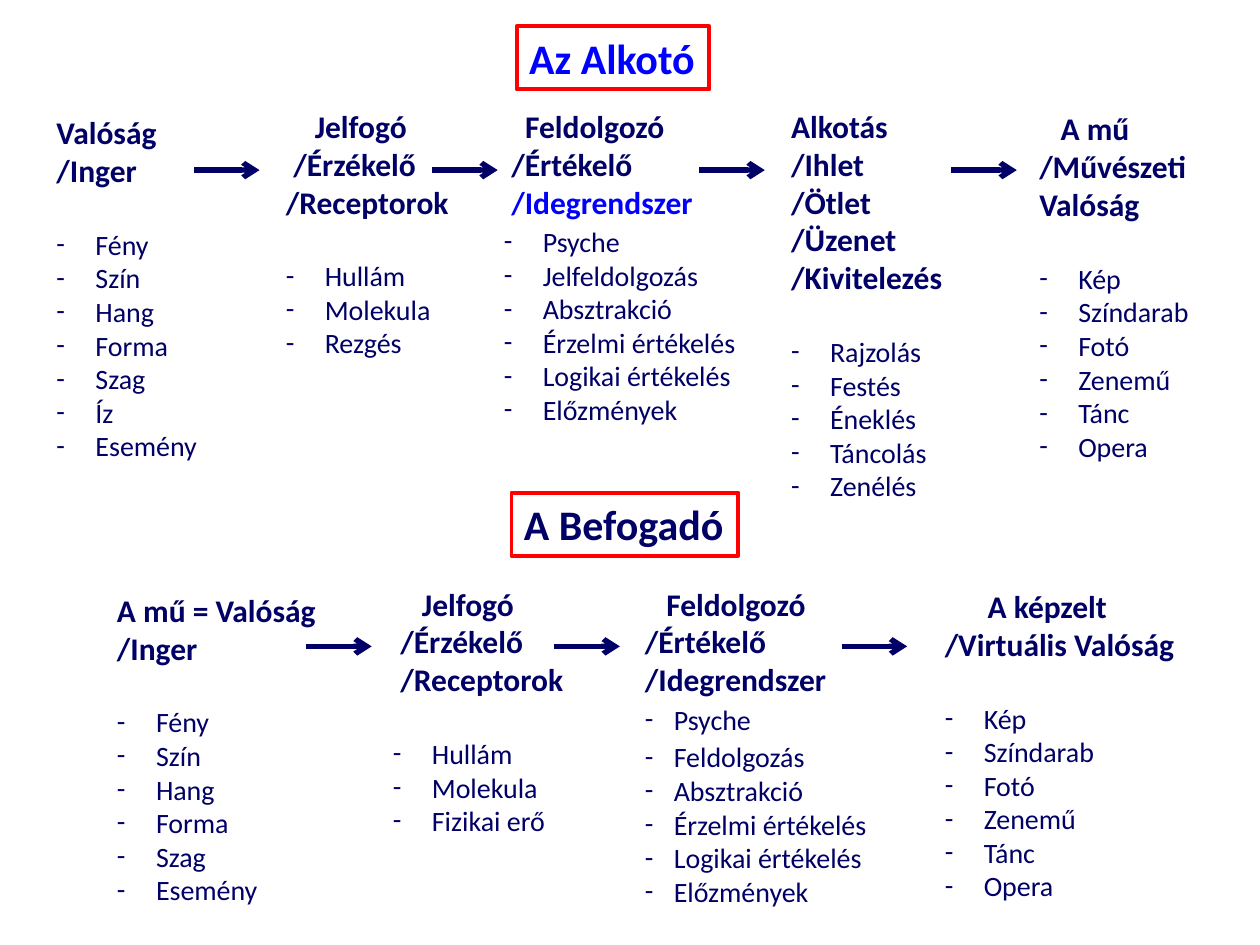
from dataclasses import dataclass
from itertools import zip_longest

from lxml.etree import SubElement
from pptx import Presentation
from pptx.dml.color import RGBColor
from pptx.enum.shapes import MSO_CONNECTOR
from pptx.enum.text import MSO_ANCHOR, MSO_AUTO_SIZE, PP_ALIGN
from pptx.oxml.ns import qn
from pptx.util import Inches, Pt


@dataclass(frozen=True)
class Theme:
    font: str = "Calibri"
    navy: RGBColor = RGBColor(0x00, 0x00, 0x66)
    blue: RGBColor = RGBColor(0x00, 0x00, 0xFF)
    red: RGBColor = RGBColor(0xFF, 0x00, 0x00)
    heading: Pt = Pt(24)
    stage: Pt = Pt(18)
    item: Pt = Pt(16)
    frame: Pt = Pt(2.25)
    arrow: Pt = Pt(3)


theme = Theme()


def style(paragraph, text, size, color, bold):
    paragraph.text = text
    paragraph.font.name = theme.font
    paragraph.font.size = size
    paragraph.font.color.rgb = color
    paragraph.font.bold = bold


def indent(paragraph, margin, hanging=False):
    properties = paragraph._p.get_or_add_pPr()
    properties.set("marL", str(Inches(margin)))
    properties.set("indent", str(-Inches(margin) if hanging else 0))
    if hanging:
        bullet_font = SubElement(properties, qn("a:buFont"))
        bullet_font.set("typeface", theme.font)
        SubElement(properties, qn("a:buChar")).set("char", "-")
        properties.append(properties.find(qn("a:defRPr")))


presentation = Presentation()
presentation.slide_width = Inches(10)
presentation.slide_height = Inches(7.5)
slide = presentation.slides.add_slide(presentation.slide_layouts[5])

creator = slide.shapes.title
receiver = slide.shapes.add_textbox(0, 0, Inches(1), Inches(0.5))
headings = [
    (creator, "Az Alkotó", theme.blue, 4.1, 0.21, 1.53),
    (receiver, "A Befogadó", theme.navy, 4.06, 3.91, 1.8),
]
for heading, text, color, left, top, width in headings:
    heading.left, heading.top = Inches(left), Inches(top)
    heading.width, heading.height = Inches(width), Inches(0.5)
    heading.line.color.rgb = theme.red
    heading.line.width = theme.frame
    frame = heading.text_frame
    frame.word_wrap = False
    frame.auto_size = MSO_AUTO_SIZE.NONE
    frame.vertical_anchor = MSO_ANCHOR.TOP
    style(frame.paragraphs[0], text, theme.heading, color, True)
    frame.paragraphs[0].alignment = PP_ALIGN.LEFT

blank_line = [22]
senses = ["Fény", "Szín", "Hang", "Forma", "Szag"]
works = ["Kép", "Színdarab", "Fotó", "Zenemű", "Tánc", "Opera"]
judgement = ["Absztrakció", "Érzelmi értékelés", "Logikai értékelés", "Előzmények"]

columns = [
    (0.35, 0.85, 1.33, 2.89, [("Valóság", 0), ("/Inger", 0)],
     senses + ["Íz", "Esemény"], 0.31, blank_line),
    (2.17, 0.8, 1.5, 2.83,
     [("Jelfogó", 0.23), ("/Érzékelő", 0.06), ("/Receptorok", 0)],
     ["Hullám", "Molekula", "Rezgés"], 0.31, blank_line),
    (3.9, 0.8, 2.07, 2.66,
     [("Feldolgozó", 0.17), ("/Értékelő", 0.06), ("/Idegrendszer", 0.06)],
     ["Psyche", "Jelfeldolgozás"] + judgement, 0.31, [2.4]),
    (6.18, 0.8, 1.41, 3.53,
     [("Alkotás", 0), ("/Ihlet", 0), ("/Ötlet", 0), ("/Üzenet", 0),
      ("/Kivitelezés", 0)],
     ["Rajzolás", "Festés", "Éneklés", "Táncolás", "Zenélés"], 0.31, blank_line),
    (8.15, 0.82, 1.4, 3.53,
     [("A mű", 0.17), ("/Művészeti", 0), ("Valóság", 0)],
     works, 0.31, blank_line),
    (0.83, 4.64, 1.79, 2.63, [("A mű = Valóság", 0), ("/Inger", 0)],
     senses + ["Esemény"], 0.31, blank_line),
    (3.02, 4.59, 1.56, 2.42,
     [("Jelfogó", 0.23), ("/Érzékelő", 0.06), ("/Receptorok", 0.06)],
     ["Hullám", "Molekula", "Fizikai erő"], 0.31, blank_line),
    (5.02, 4.59, 1.97, 2.69,
     [("Feldolgozó", 0.17), ("/Értékelő", 0), ("/Idegrendszer", 0)],
     ["Psyche", "Feldolgozás"] + judgement, 0.23, [2.4, 2.4]),
    (7.4, 4.61, 2.04, 3.23, [("A képzelt", 0.34), ("/Virtuális Valóság", 0)],
     works, 0.31, blank_line),
]
for left, top, width, height, stages, items, hanging, gaps in columns:
    column = slide.shapes.add_textbox(
        Inches(left), Inches(top), Inches(width), Inches(height))
    frame = column.text_frame
    frame.word_wrap = False
    frame.auto_size = MSO_AUTO_SIZE.SHAPE_TO_FIT_TEXT
    paragraph = frame.paragraphs[0]
    for position, (text, margin) in enumerate(stages):
        if position:
            paragraph = frame.add_paragraph()
        highlighted = text == "/Idegrendszer" and top < 4
        color = theme.blue if highlighted else theme.navy
        style(paragraph, text, theme.stage, color, True)
        indent(paragraph, margin)
    for text, gap in zip_longest(items, gaps, fillvalue=0):
        paragraph = frame.add_paragraph()
        paragraph.space_before = Pt(gap)
        style(paragraph, text, theme.item, theme.navy, False)
        indent(paragraph, hanging, True)

arrow_rows = [
    (1.35, [1.54, 3.43, 5.55, 7.55]),
    (5.13, [2.43, 4.4, 6.68]),
]
for height, starts in arrow_rows:
    for start in starts:
        arrow = slide.shapes.add_connector(
            MSO_CONNECTOR.STRAIGHT, Inches(start), Inches(height),
            Inches(start + 0.52), Inches(height))
        arrow.line.color.rgb = theme.navy
        arrow.line.width = theme.arrow
        SubElement(arrow.line._get_or_add_ln(), qn("a:tailEnd")).set("type", "arrow")
        SubElement(arrow._element.spPr, qn("a:effectLst"))

presentation.save("out.pptx")
